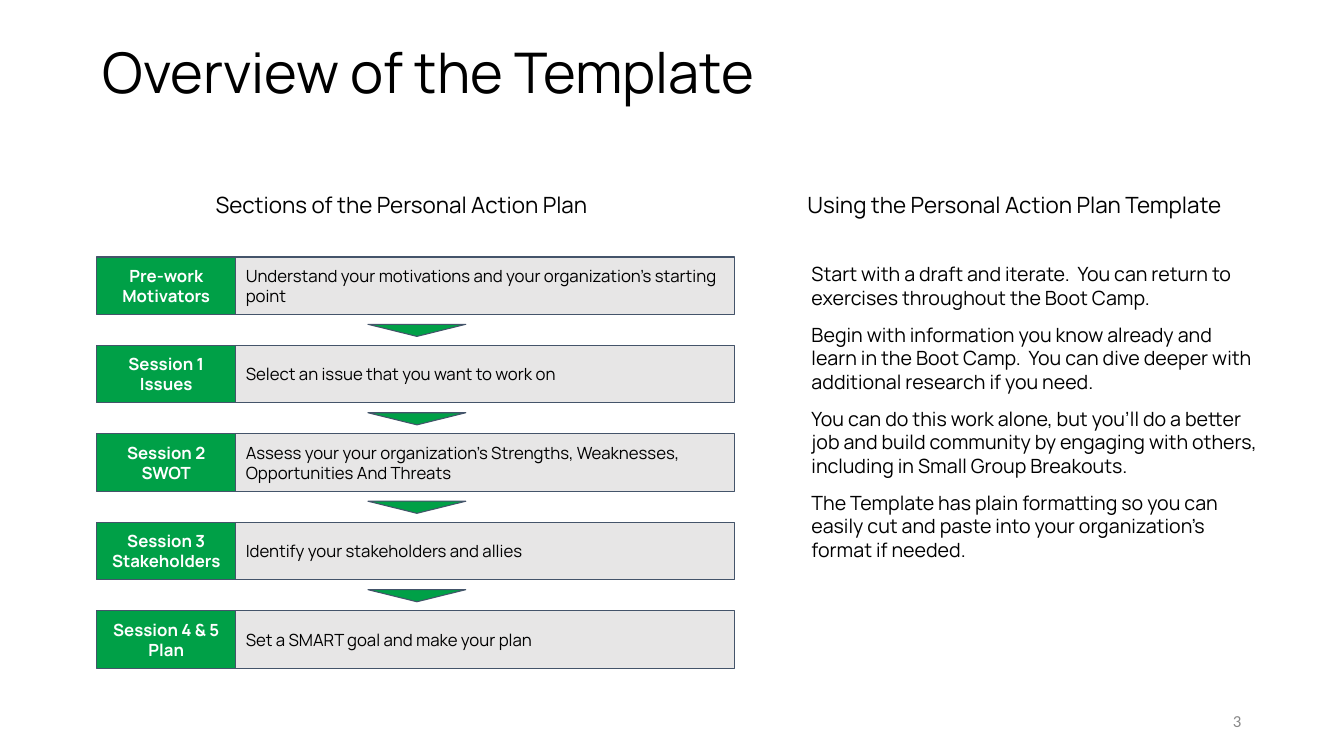
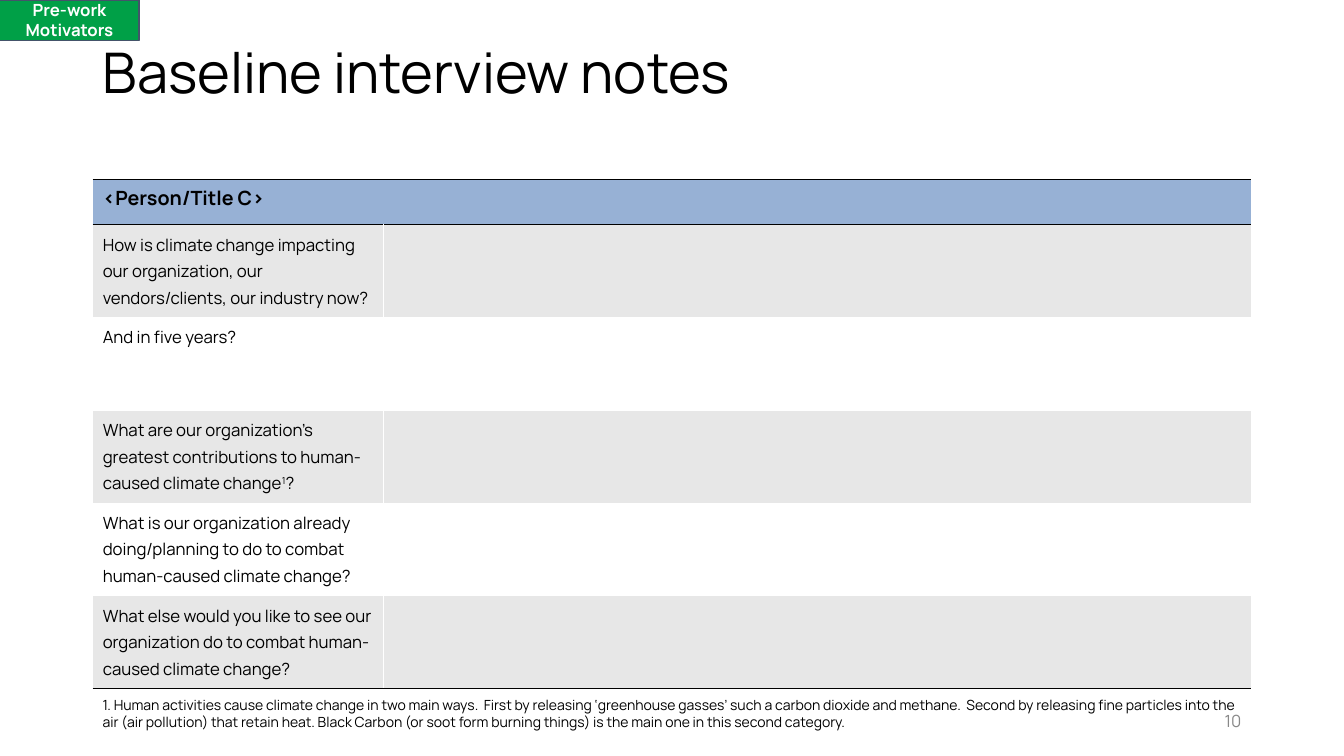
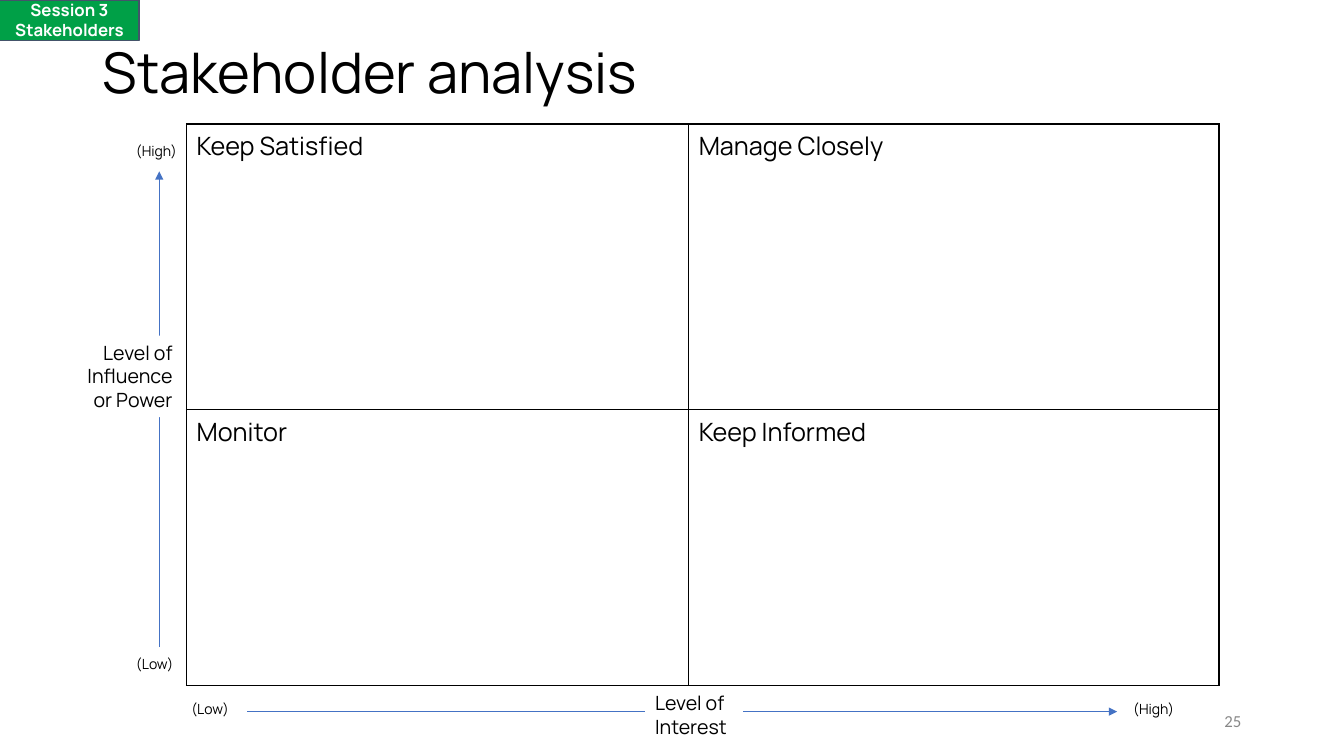
from dataclasses import dataclass

from lxml import etree
from pptx import Presentation
from pptx.dml.color import RGBColor
from pptx.enum.shapes import MSO_CONNECTOR, MSO_SHAPE
from pptx.enum.text import MSO_ANCHOR, MSO_AUTO_SIZE, PP_ALIGN
from pptx.oxml.ns import qn
from pptx.util import Inches, Pt

RECT, TRIANGLE = MSO_SHAPE.RECTANGLE, MSO_SHAPE.ISOSCELES_TRIANGLE
STRAIGHT = MSO_CONNECTOR.STRAIGHT
TOP, MIDDLE = MSO_ANCHOR.TOP, MSO_ANCHOR.MIDDLE
LEFT, CENTER, RIGHT = PP_ALIGN.LEFT, PP_ALIGN.CENTER, PP_ALIGN.RIGHT


@dataclass(frozen=True)
class Theme:
    font: str = "Manrope"
    number_font: str = "Calibri"
    black: str = "000000"
    white: str = "FFFFFF"
    green: str = "00A047"
    gray: str = "E7E6E6"
    band: str = "E7E7E7"
    header: str = "97B1D5"
    outline: str = "44546A"
    arrow: str = "4472C4"
    muted: str = "888888"
    title: int = 40
    quadrant: int = 18
    heading: int = 16
    body: int = 14
    label: int = 12
    small: int = 10
    hairline: float = 0.75


T = Theme()

# Grid: 100 columns by 100 rows over the whole slide
prs = Presentation()
prs.slide_width, prs.slide_height = Inches(13.33), Inches(7.5)
COL, ROW = prs.slide_width / 100, prs.slide_height / 100
MARGIN, CONTENT = 6.9, 86.2
TAG_W, TAG_H = 10.35, 5.33


def write(tf, text, size=T.label, color=T.black, font=T.font, bold=False,
          align=LEFT, anchor=TOP, spacing=None, after=0, inset=0.05):
    """One paragraph per line; text between ^ marks is superscript."""
    tf.word_wrap = True
    tf.vertical_anchor = anchor
    tf.margin_left = tf.margin_right = Inches(0.1)
    tf.margin_top = tf.margin_bottom = Inches(inset)
    for i, line in enumerate(text.split("\n")):
        p = tf.add_paragraph() if i else tf.paragraphs[0]
        p.alignment, p.line_spacing = align, spacing
        p.space_before, p.space_after = Pt(0), Pt(after)
        for j, part in enumerate(line.split("^")):
            r = p.add_run()
            r.text = part
            r.font.name, r.font.size, r.font.bold = font, Pt(size), bold
            r.font.color.rgb = RGBColor.from_string(color)
            if j % 2:
                r._r.get_or_add_rPr().set("baseline", "30000")


def box(s, x, y, w, h, text="", fill=None, line=None, shape=RECT, **fmt):
    """A text box, or a preset shape when it has a fill."""
    at = [round(v) for v in (x * COL, y * ROW, w * COL, h * ROW)]
    if fill is None:
        sp = s.shapes.add_textbox(*at)
    else:
        sp = s.shapes.add_shape(shape, *at)
        sp.shadow.inherit = False
        sp.fill.solid()
        sp.fill.fore_color.rgb = RGBColor.from_string(fill)
        if line:
            sp.line.color.rgb = RGBColor.from_string(line)
            sp.line.width = Pt(T.hairline)
        else:
            sp.line.fill.background()
    if text:
        write(sp.text_frame, text, **fmt)
    return sp


TAG = dict(fill=T.green, line=T.outline, color=T.white, bold=True,
           align=CENTER, anchor=MIDDLE, inset=0.1)
SECTIONS = [
    ("Pre-work\nMotivators",
     "Understand your motivations and your organization’s starting point"),
    ("Session 1\nIssues", "Select an issue that you want to work on"),
    ("Session 2\nSWOT", "Assess your your organization’s Strengths, "
     "Weaknesses, Opportunities And Threats"),
    ("Session 3\nStakeholders", "Identify your stakeholders and allies"),
    ("Session 4 & 5\nPlan", "Set a SMART goal and make your plan"),
]

# Shared frame: title, page number, section tag
slides = []
for title, number, number_font, section in [
        ("Overview of the Template", "3", T.number_font, None),
        ("Baseline interview notes", "10", T.font, 0),
        ("Stakeholder analysis", "25", T.number_font, 3)]:
    s = prs.slides.add_slide(prs.slide_layouts[5])
    sp = s.shapes.title
    sp.left, sp.top = round(MARGIN * COL), round(5.33 * ROW)
    sp.width, sp.height = round(CONTENT * COL), round(19.33 * ROW)
    sp.text_frame.auto_size = MSO_AUTO_SIZE.NONE
    write(sp.text_frame, title, size=T.title, spacing=0.9)
    box(s, 70.6, 92.67, 22.5, 5.33, number, font=number_font,
        color=T.muted, align=RIGHT, anchor=MIDDLE)
    if section is not None:
        box(s, 0, 0, TAG_W, TAG_H, SECTIONS[section][0], **TAG)
    slides.append(s)
overview, interview, stakeholders = slides

# Overview: headings
for x, w, heading in [(15.3, 31.43, "Sections of the Personal Action Plan"),
                      (59.34, 35.33, "Using the Personal Action Plan Template")]:
    box(overview, x, 24.67, w, 4.93, heading, size=T.heading)

# Overview: chain of sections
CHAIN_X, CHAIN_Y, STEP_H, PITCH = 7.2, 34, 7.6, 11.7
for i, (name, purpose) in enumerate(SECTIONS):
    y = CHAIN_Y + i * PITCH
    box(overview, CHAIN_X + TAG_W, y, 37.13, STEP_H, purpose, fill=T.gray,
        line=T.outline, anchor=MIDDLE, inset=0.1)
    box(overview, CHAIN_X, y, TAG_W, STEP_H, name, **TAG)
    if i:
        sp = box(overview, 27.38, y - 2.8, 7.28, 1.6, fill=T.green,
                 line=T.outline, shape=TRIANGLE)
        sp.rotation = 180

# Overview: advice
box(overview, 59.64, CHAIN_Y, 34.73, 55.07, "\n".join([
    "Start with a draft and iterate.  You can return to exercises throughout "
    "the Boot Camp.",
    "Begin with information you know already and learn in the Boot Camp.  "
    "You can dive deeper with additional research if you need.",
    "You can do this work alone, but you’ll do a better job and build "
    "community by engaging with others, including in Small Group Breakouts.",
    "The Template has plain formatting so you can easily cut and paste into "
    "your organization’s format if needed."]), size=T.body, after=9.6)

# Tables: x, y, column widths, row heights
grids = []
for s, x, y, cols, rows in [
        (interview, MARGIN, 23.73, [21.6, 64.6], [6] + [12.27] * 5),
        (stakeholders, 13.88, 16.4, [37.36, 39.46], [37.73, 36.5])]:
    table = s.shapes.add_table(
        len(rows), len(cols), round(x * COL), round(y * ROW),
        round(sum(cols) * COL), round(sum(rows) * ROW)).table
    table.first_row = table.horz_banding = False
    for column, w in zip(table.columns, cols):
        column.width = round(w * COL)
    for row, h in zip(table.rows, rows):
        row.height = round(h * ROW)
    grids.append(table)
notes, matrix = grids
borders = []  # (cell, width, colours of left, right, top, bottom)

# Interview: question table
QUESTIONS = [
    "How is climate change impacting our organization, our vendors/clients, "
    "our industry now?",
    "And in five years?",
    "What are our organization’s greatest contributions to human-caused "
    "climate change^1^?",
    "What is our organization already doing/planning to do to combat "
    "human-caused climate change?",
    "What else would you like to see our organization do to combat "
    "human-caused climate change?",
]
notes.cell(0, 0).merge(notes.cell(0, 1))
write(notes.cell(0, 0).text_frame, "<Person/Title C>", size=T.body, bold=True)
for i, question in enumerate(QUESTIONS, 1):
    write(notes.cell(i, 0).text_frame, question, spacing=1.15)
for i in range(len(QUESTIONS) + 1):
    fill = T.header if i == 0 else T.band if i % 2 else T.white
    top = T.black if i < 2 else T.white
    bottom = T.black if i in (0, len(QUESTIONS)) else T.white
    for j in range(2):
        cell = notes.cell(i, j)
        cell.fill.solid()
        cell.fill.fore_color.rgb = RGBColor.from_string(fill)
        inner = T.white if i else None
        borders.append((cell, 0.5, (inner if j else None,
                                    None if j else inner, top, bottom)))

# Interview: footnote
box(interview, MARGIN, 91.47, CONTENT, 5.87,
    "1. Human activities cause climate change in two main ways.  First by "
    "releasing ‘greenhouse gasses’ such a carbon dioxide and methane.  Second "
    "by releasing fine particles into the air (air pollution) that retain "
    "heat. Black Carbon (or soot form burning things) is the main one in this "
    "second category.", size=T.small)

# Stakeholders: quadrants
QUADRANTS = ["Keep Satisfied", "Manage Closely", "Monitor", "Keep Informed"]
for i, name in enumerate(QUADRANTS):
    cell = matrix.cell(*divmod(i, 2))
    cell.fill.background()
    write(cell.text_frame, name, size=T.quadrant)
    borders.append((cell, 1, (T.black,) * 4))

# Cell borders come before the fill in the cell properties
for cell, width, colors in borders:
    tcPr = cell._tc.get_or_add_tcPr()
    for i, (edge, color) in enumerate(zip("LRTB", colors)):
        ln = etree.Element(qn("a:ln" + edge), w=str(Pt(width)))
        if color:
            solid = etree.SubElement(ln, qn("a:solidFill"))
            etree.SubElement(solid, qn("a:srgbClr"), val=color)
        else:
            etree.SubElement(ln, qn("a:noFill"))
        tcPr.insert(i, ln)

# Stakeholders: axis arrows
for x1, y1, x2, y2 in [(18.38, 94.13, 83.12, 94.13),
                       (11.85, 85.6, 11.85, 22.67)]:
    axis = stakeholders.shapes.add_connector(
        STRAIGHT, round(x1 * COL), round(y1 * ROW),
        round(x2 * COL), round(y2 * ROW))
    axis.line.color.rgb = RGBColor.from_string(T.arrow)
    axis.line.width = Pt(T.hairline)
    spPr = axis._element.spPr
    etree.SubElement(spPr.find(qn("a:ln")), qn("a:tailEnd"), type="triangle")
    etree.SubElement(spPr, qn("a:effectLst"))

# Stakeholders: axis names and ends
box(stakeholders, 3.38, 44.4, 10.2, 10.8, "Level of\nInfluence\nor Power",
    fill=T.white, size=T.body, align=RIGHT)
box(stakeholders, 48, 90.8, 7.28, 7.6, "Level of Interest",
    fill=T.white, size=T.body)
for x, y, w, end in [(9.38, 17.73, 6.68, "(High)"), (83.57, 91.6, 6.53, "(High)"),
                     (9.38, 85.6, 4.95, "(Low)"), (13.5, 91.6, 5.18, "(Low)")]:
    box(stakeholders, x, y, w, 4.93, end, size=T.small, inset=0.1)

prs.save("out.pptx")
